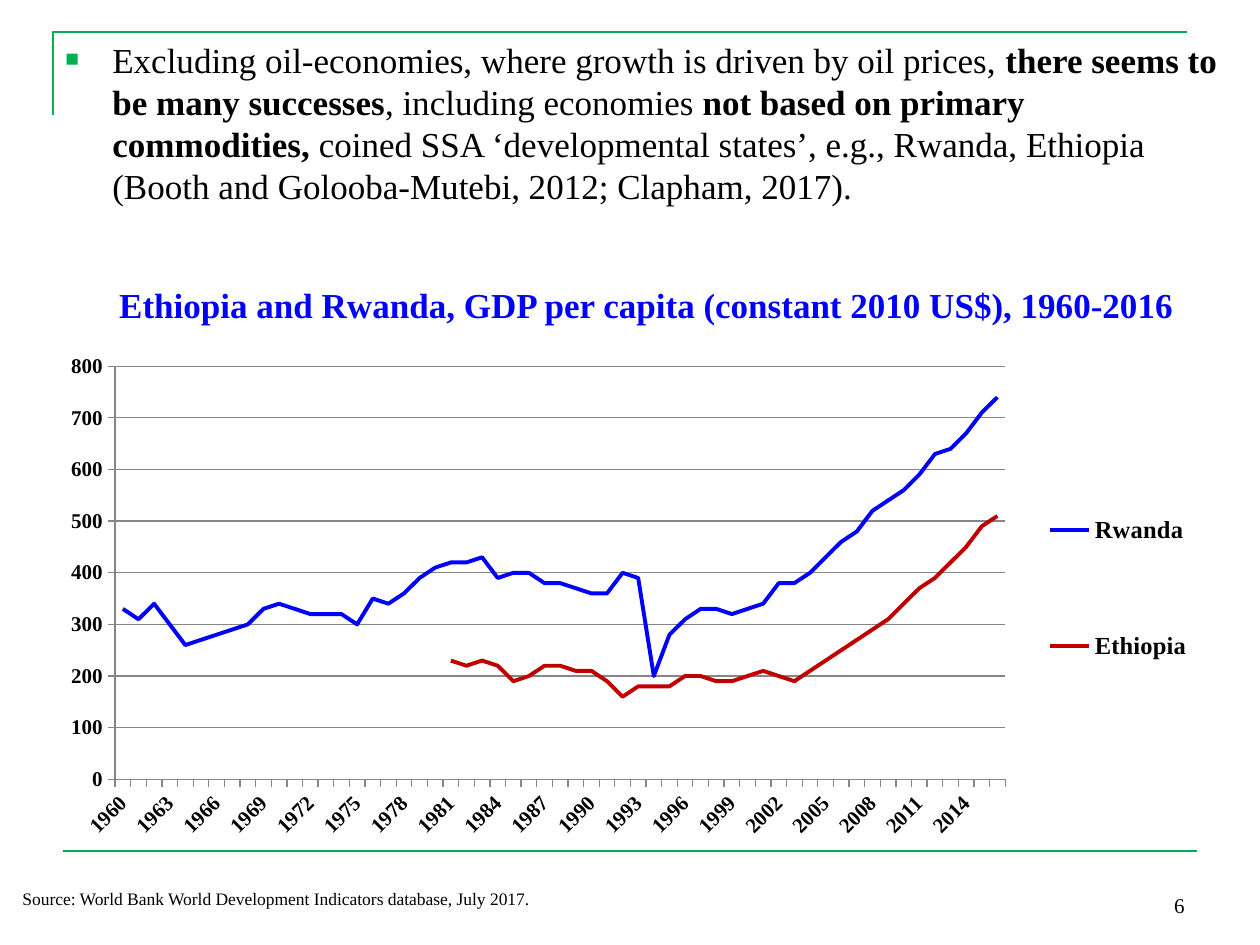
from lxml import etree
from pptx import Presentation
from pptx.chart.data import CategoryChartData
from pptx.dml.color import RGBColor
from pptx.enum.chart import XL_CHART_TYPE as ChartType, XL_LEGEND_POSITION as LegendPosition
from pptx.enum.chart import XL_TICK_MARK as TickMark
from pptx.enum.shapes import MSO_CONNECTOR as Connector
from pptx.enum.text import MSO_ANCHOR as Anchor, PP_ALIGN as Align
from pptx.oxml import parse_xml
from pptx.oxml.ns import nsdecls, qn
from pptx.util import Pt

PX = 914400 / 126
FONT = "Times New Roman"
COLORS = {"text": "000000", "accent": "00B050", "rwanda": "0000FF",
          "ethiopia": "C00000", "axis": "868686"}

YEARS = range(1960, 2017)
RWANDA = [330, 310, 340, 300, 260, 270, 280, 290, 300, 330, 340, 330, 320, 320, 320,
          300, 350, 340, 360, 390, 410, 420, 420, 430, 390, 400, 400, 380, 380, 370,
          360, 360, 400, 390, 200, 280, 310, 330, 330, 320, 330, 340, 380, 380, 400,
          430, 460, 480, 520, 540, 560, 590, 630, 640, 670, 710, 740]
ETHIOPIA_FROM_1981 = [230, 220, 230, 220, 190, 200, 220, 220, 210, 210, 190, 160, 180,
                      180, 180, 200, 200, 190, 190, 200, 210, 200, 190, 210, 230, 250,
                      270, 290, 310, 340, 370, 390, 420, 450, 490, 510]
ETHIOPIA = [None] * (1981 - YEARS.start) + ETHIOPIA_FROM_1981


def emu(*lengths):
    return [round(length * PX) for length in lengths]


def rgb(name):
    return RGBColor.from_string(COLORS[name])


def format_font(font, size, color="text", bold=False):
    font.name, font.size, font.bold = FONT, Pt(size), bold
    font.color.rgb = rgb(color)


def write_text(frame, runs, size, color="text", align=Align.LEFT, anchor=Anchor.TOP):
    """Fill the frame with one paragraph of (text, bold) runs."""
    frame.word_wrap = True
    frame.vertical_anchor = anchor
    paragraph = frame.paragraphs[0]
    paragraph.alignment = align
    for text, bold in runs:
        run = paragraph.add_run()
        run.text = text
        format_font(run.font, size, color, bold)
    return paragraph


def set_layout(element, x, y, width, height, inner=False):
    """Place a plot area or legend by fractions of the chart."""
    for old in element.findall(qn("c:layout")):
        element.remove(old)
    target = '<c:layoutTarget val="inner"/>' if inner else ""
    layout = parse_xml(
        f'<c:layout {nsdecls("c")}><c:manualLayout>{target}'
        '<c:xMode val="edge"/><c:yMode val="edge"/>'
        f'<c:x val="{x}"/><c:y val="{y}"/><c:w val="{width}"/><c:h val="{height}"/>'
        '</c:manualLayout></c:layout>')
    if inner:
        element.insert(0, layout)
    else:
        element.find(qn("c:legendPos")).addnext(layout)


class SlideBuilder:
    def __init__(self, presentation):
        self.slide = presentation.slides.add_slide(presentation.slide_layouts[5])
        self.shapes = self.slide.shapes

    def title(self, text, box, **style):
        title = self.shapes.title
        title.left, title.top, title.width, title.height = emu(*box)
        write_text(title.text_frame, [(text, True)], **style)

    def text(self, runs, box, **style):
        shape = self.shapes.add_textbox(*emu(*box))
        return write_text(shape.text_frame, runs, **style)

    def bullet(self, runs, box, indent, **style):
        paragraph = self.text(runs, box, **style)
        paragraph.line_spacing = Pt(24)
        properties = paragraph._p.get_or_add_pPr()
        margin = emu(indent)[0]
        properties.set("marL", str(margin))
        properties.set("indent", str(-margin))
        color = etree.SubElement(properties, qn("a:buClr"))
        etree.SubElement(color, qn("a:srgbClr"), val=COLORS["accent"])
        etree.SubElement(properties, qn("a:buSzPct"), val="65000")
        etree.SubElement(properties, qn("a:buFont"), typeface="Arial")
        etree.SubElement(properties, qn("a:buChar"), char="■")

    def outline(self, line):
        line.color.rgb = rgb("accent")
        line.width = Pt(1.5)

    def rule(self, start, end):
        line = self.shapes.add_connector(Connector.STRAIGHT, *emu(*start, *end))
        self.outline(line.line)
        etree.SubElement(line._element.spPr, qn("a:effectLst"))

    def corner(self, start, *points):
        builder = self.shapes.build_freeform(*start, scale=PX)
        builder.add_line_segments(points, close=False)
        shape = builder.convert_to_shape()
        shape.shadow.inherit = False
        shape.fill.background()
        self.outline(shape.line)

    def line_chart(self, categories, series, box):
        data = CategoryChartData()
        data.categories = [str(category) for category in categories]
        for name, values, _ in series:
            data.add_series(name, values)
        chart = self.shapes.add_chart(ChartType.LINE, *emu(*box), data).chart
        chart.has_title = False
        format_font(chart.font, 12)
        chart.plots[0].vary_by_categories = False
        for line, (_, _, color) in zip(chart.plots[0].series, series):
            line.smooth = False
            line.format.line.color.rgb = rgb(color)
            line.format.line.width = Pt(2.25)

        # Axes
        years, amounts = chart.category_axis, chart.value_axis
        amounts.minimum_scale, amounts.maximum_scale, amounts.major_unit = 0, 800, 100
        amounts.has_major_gridlines = True
        for axis in (years, amounts):
            axis.major_tick_mark = TickMark.OUTSIDE
            format_font(axis.tick_labels.font, 12, bold=True)
        for part in (years, amounts, amounts.major_gridlines):
            part.format.line.color.rgb = rgb("axis")
            part.format.line.width = Pt(0.75)
        years._element.find(qn("c:txPr")).find(qn("a:bodyPr")).set("rot", "-2700000")
        skip = parse_xml(f'<c:tickLblSkip {nsdecls("c")} val="3"/>')
        years._element.find(qn("c:noMultiLvlLbl")).addprevious(skip)

        # Legend and plot area
        chart.has_legend = True
        chart.legend.position = LegendPosition.RIGHT
        chart.legend.include_in_layout = False
        format_font(chart.legend.font, 14, bold=True)
        set_layout(chart.legend._element, 0.84, 0.18, 0.15, 0.64)
        plot_area = chart._chartSpace.chart.plotArea
        set_layout(plot_area, 0.07, 0.06, 0.75, 0.82, inner=True)


def main():
    presentation = Presentation()
    presentation.slide_width, presentation.slide_height = emu(1260, 945)
    builder = SlideBuilder(presentation)

    # Frame
    builder.corner((53, 115), (53, 32), (1187, 32))
    builder.rule((63, 851), (1197, 851))

    # Message and chart heading
    builder.bullet([
        ("Excluding oil-economies, where growth is driven by oil prices, ", False),
        ("there seems to be many successes", True),
        (", including economies ", False),
        ("not based on primary commodities,", True),
        (" coined SSA ‘developmental states’, e.g., Rwanda, Ethiopia "
         "(Booth and Golooba-Mutebi, 2012; Clapham, 2017).", False),
    ], (53, 32, 1187, 190), indent=47, size=20)
    builder.title("Ethiopia and Rwanda, GDP per capita (constant 2010 US$), 1960-2016",
                  (53, 280, 1187, 50), size=20, color="rwanda",
                  align=Align.CENTER, anchor=Anchor.MIDDLE)

    # Chart
    builder.line_chart(YEARS, [("Rwanda", RWANDA, "rwanda"),
                               ("Ethiopia", ETHIOPIA, "ethiopia")], (32, 336, 1187, 504))

    # Footer
    builder.text([("Source: World Bank World Development Indicators database, July 2017.",
                   False)], (10, 882, 546, 34), size=10)
    builder.text([("6", False)], (903, 861, 294, 63), size=12,
                 align=Align.RIGHT, anchor=Anchor.BOTTOM)

    presentation.save("out.pptx")


if __name__ == "__main__":
    main()
